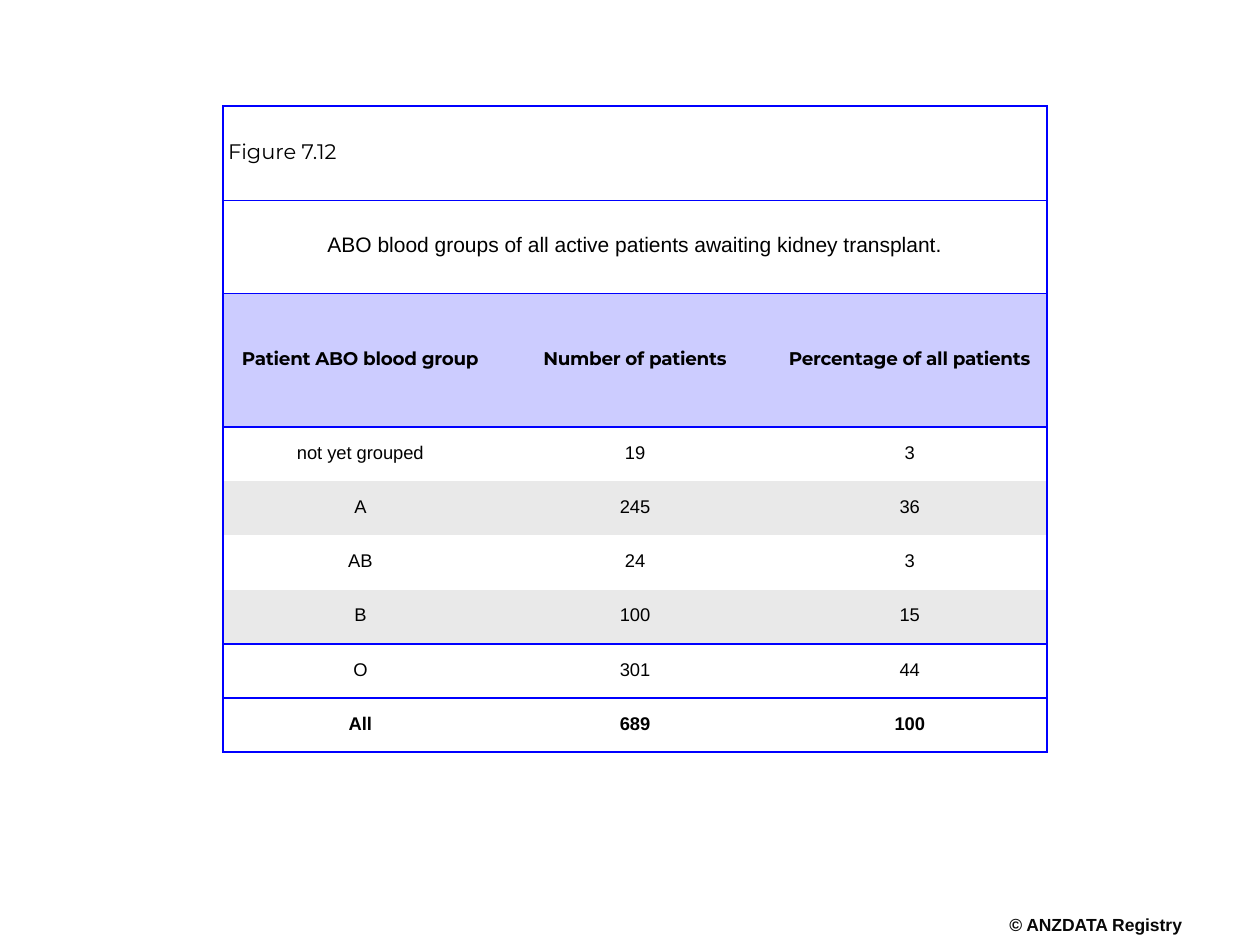
from lxml.etree import SubElement
from pptx import Presentation
from pptx.dml.color import RGBColor
from pptx.enum.text import MSO_ANCHOR as Anchor, MSO_AUTO_SIZE as AutoSize, PP_ALIGN as Align
from pptx.oxml.ns import qn
from pptx.util import Inches, Pt

BLACK = RGBColor(0x00, 0x00, 0x00)
INK = RGBColor(0x08, 0x08, 0x08)
WHITE = RGBColor(0xFF, 0xFF, 0xFF)
BLUE = RGBColor(0x00, 0x00, 0xFF)
LAVENDER = RGBColor(0xCC, 0xCC, 0xFF)
GREY = RGBColor(0xE9, 0xE9, 0xE9)

BODY = {"name": "Arial", "size": Pt(10.5), "bold": False}
TOTAL = {**BODY, "bold": True}
HEAD = {**TOTAL, "name": "Montserrat"}
CAPTION = {**BODY, "size": Pt(12)}
LABEL = {**CAPTION, "name": "Montserrat"}
FOOTER = {**TOTAL, "size": Pt(10)}

TITLES = [
    ["Figure 7.12", "", ""],
    ["ABO blood groups of all active patients awaiting kidney transplant.", "", ""],
]
HEADINGS = ["Patient ABO blood group", "Number of patients", "Percentage of all patients"]
GROUPS = [
    ["not yet grouped", "19", "3"],
    ["A", "245", "36"],
    ["AB", "24", "3"],
    ["B", "100", "15"],
    ["O", "301", "44"],
    ["All", "689", "100"],
]
ROWS = TITLES + [HEADINGS] + GROUPS
FORMATS = [LABEL, CAPTION, HEAD] + [BODY] * 5 + [TOTAL]
FILLS = [WHITE, WHITE, LAVENDER, None, GREY, None, GREY, None, None]
HEIGHTS = [0.75, 0.74, 1.06] + [0.43] * 6
SPACES_AFTER = [2.7, 2.7, 0] + [14] * 6
RULES = {0, 1, 2, 3, 7, 8, 9}


class SlideBuilder:
    def __init__(self, slide, line_color=BLUE, line_width=1, line_spacing=0.85):
        self.s = slide
        self.line_color = line_color
        self.line_width = line_width
        self.line_spacing = line_spacing

    def paragraph(self, tf, text, fmt, color=BLACK, align=Align.CENTER, after=0):
        p = tf.paragraphs[0]
        p.alignment = align
        p.line_spacing = self.line_spacing
        p.space_before = Pt(0)
        p.space_after = Pt(after)
        r = p.add_run()
        r.text = text
        for key, value in fmt.items():
            setattr(r.font, key, value)
        r.font.color.rgb = color
        return r

    def text(self, box, text, fmt, color):
        tf = self.s.shapes.add_textbox(*map(Inches, box)).text_frame
        for side in ("left", "top", "right", "bottom"):
            setattr(tf, f"margin_{side}", 0)
        tf.word_wrap = False
        tf.auto_size = AutoSize.SHAPE_TO_FIT_TEXT
        self.paragraph(tf, text, fmt, color)

    def borders(self, cell, visible):
        tc_pr = cell._tc.get_or_add_tcPr()
        for side in "LRTB":
            ln = SubElement(tc_pr, qn(f"a:ln{side}"), w=str(Pt(self.line_width)))
            if side in visible:
                fill = SubElement(ln, qn("a:solidFill"))
                SubElement(fill, qn("a:srgbClr"), val=str(self.line_color))
            else:
                SubElement(ln, qn("a:noFill"))

    def cell(self, cell, fill, margins):
        for side, value in margins.items():
            setattr(cell, f"margin_{side}", Inches(value))
        cell.vertical_anchor = Anchor.MIDDLE
        if fill is None:
            cell.fill.background()
        else:
            cell.fill.solid()
            cell.fill.fore_color.rgb = fill

    def table(self, box, rows):
        last = len(rows[0]) - 1
        table = self.s.shapes.add_table(len(rows), last + 1, *map(Inches, box)).table
        table.first_row = table.horz_banding = False
        for i, row in enumerate(rows):
            table.rows[i].height = Inches(HEIGHTS[i])
            merged = i < len(TITLES)
            if merged:
                table.cell(i, 0).merge(table.cell(i, last))
            side, edge = (0.39, 0.02) if row is TITLES[1] else (0.04, 0.04)
            margins = {"left": side, "right": side, "top": edge, "bottom": edge}
            for j, text in enumerate(row):
                cell = table.cell(i, j)
                visible = {"L": j == 0, "R": j == last or merged and j == 0,
                           "T": i in RULES, "B": i + 1 in RULES}
                self.borders(cell, [k for k, shown in visible.items() if shown])
                self.cell(cell, FILLS[i], margins)
                if text:
                    align = Align.LEFT if i == 0 else Align.CENTER
                    r = self.paragraph(cell.text_frame, text, FORMATS[i], align=align,
                                       after=SPACES_AFTER[i])
                    if row is HEADINGS:
                        r.font._element.set("spc", "-10")


def main():
    prs = Presentation()
    prs.slide_width, prs.slide_height = Inches(10), Inches(7.5)
    builder = SlideBuilder(prs.slides.add_slide(prs.slide_layouts[6]))
    builder.text((7.99, 7.28, 1.41, 0.17), "© ANZDATA Registry", FOOTER, INK)
    builder.table((1.77, 0.84, 6.54, sum(HEIGHTS)), ROWS)
    prs.save("out.pptx")


if __name__ == "__main__":
    main()
